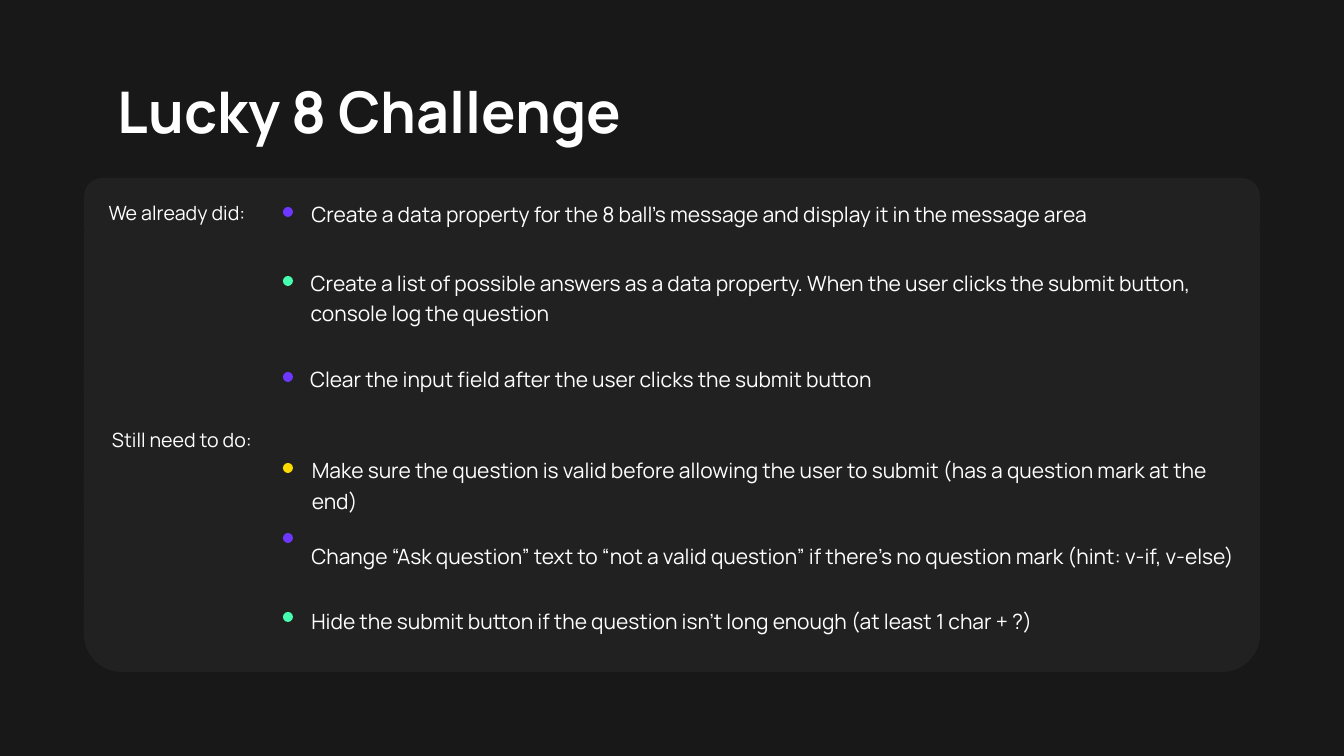
from pptx import Presentation
from pptx.dml.color import RGBColor
from pptx.enum.shapes import MSO_SHAPE
from pptx.enum.text import MSO_ANCHOR, MSO_AUTO_SIZE, PP_ALIGN
from pptx.util import Pt

PX = 12192000 / 1344
ROUND, OVAL = MSO_SHAPE.ROUNDED_RECTANGLE, MSO_SHAPE.OVAL
TOP, MIDDLE = MSO_ANCHOR.TOP, MSO_ANCHOR.MIDDLE
LEFT, CENTER = PP_ALIGN.LEFT, PP_ALIGN.CENTER
GROW = MSO_AUTO_SIZE.SHAPE_TO_FIT_TEXT
FONT = "Manrope"
BACK, PANEL, WHITE = "181818", "212121", "FFFFFF"
PURPLE, GREEN, YELLOW = "6D37FF", "46FFAF", "FFDB00"
EDGE, WIDE = 84, 1176

# top, height, dot top, dot colour, text
TASKS = [
    (178, 68, 207, PURPLE,
     "Create a data property for the 8 ball’s message and display it in the message area"),
    (266, 59, 276, GREEN,
     "Create a list of possible answers as a data property. "
     "When the user clicks the submit button, console log the question"),
    (351, 51, 372, PURPLE,
     "Clear the input field after the user clicks the submit button"),
    (446, 74, 463, YELLOW,
     "Make sure the question is valid before allowing the user to submit "
     "(has a question mark at the end)"),
    (520, 68, 533, PURPLE,
     "Change “Ask question” text to “not a valid question” "
     "if there’s no question mark (hint: v-if, v-else)"),
    (585, 68, 612, GREEN,
     "Hide the submit button if the question isn’t long enough (at least 1 char + ?)"),
]
LABELS = [(105, 201, "We already did:"), (110, 428, "Still need to do:")]


def px(n):
    return round(n * PX)


def color(code):
    return RGBColor.from_string(code)


def write(shape, text, size, align=LEFT, anchor=TOP, inset=0, lines=1.0, bold=False):
    frame = shape.text_frame
    frame.word_wrap = True
    frame.vertical_anchor = anchor
    frame.margin_left = px(inset)
    frame.margin_top = frame.margin_right = frame.margin_bottom = 0
    frame.text = text
    para = frame.paragraphs[0]
    para.alignment = align
    para.line_spacing = lines
    font = para.font
    font.name, font.size, font.bold = FONT, Pt(size), bold
    font.color.rgb = color(WHITE)


def add_shape(slide, kind, x, y, w, h, fill):
    shape = slide.shapes.add_shape(kind, px(x), px(y), px(w), px(h))
    shape.shadow.inherit = False
    shape.fill.solid()
    shape.fill.fore_color.rgb = color(fill)
    shape.line.fill.background()
    return shape


def add_card(slide, top, high, bend):
    card = add_shape(slide, ROUND, EDGE, top, WIDE, high, PANEL)
    card.adjustments[0] = bend
    return card


def add_task(slide, top, high, dot_top, dot_fill, text):
    """Add one row of the list with its coloured dot."""
    card = add_card(slide, top, high, 0.27)
    write(card, text, 15, anchor=MIDDLE, inset=222, lines=1.2)
    add_shape(slide, OVAL, 283, dot_top, 10, 10, dot_fill)


def add_label(slide, x, y, text):
    box = slide.shapes.add_textbox(px(x), px(y), px(144), px(75))
    write(box, text, 14, align=CENTER)


def set_title(slide, text):
    title = slide.shapes.title
    title.left, title.top = px(118), px(84)
    title.width, title.height = px(1117), px(62)
    write(title, text, 41, lines=0.9, bold=True)
    title.text_frame.auto_size = GROW


def main():
    deck = Presentation()
    deck.slide_width, deck.slide_height = px(1344), px(756)
    slide = deck.slides.add_slide(deck.slide_layouts.get_by_name("Title Only"))
    slide.background.fill.solid()
    slide.background.fill.fore_color.rgb = color(BACK)
    set_title(slide, "Lucky 8 Challenge")
    add_card(slide, 200, 472, 0.08)
    for task in TASKS:
        add_task(slide, *task)
    for label in LABELS:
        add_label(slide, *label)
    deck.save("out.pptx")


if __name__ == "__main__":
    main()
